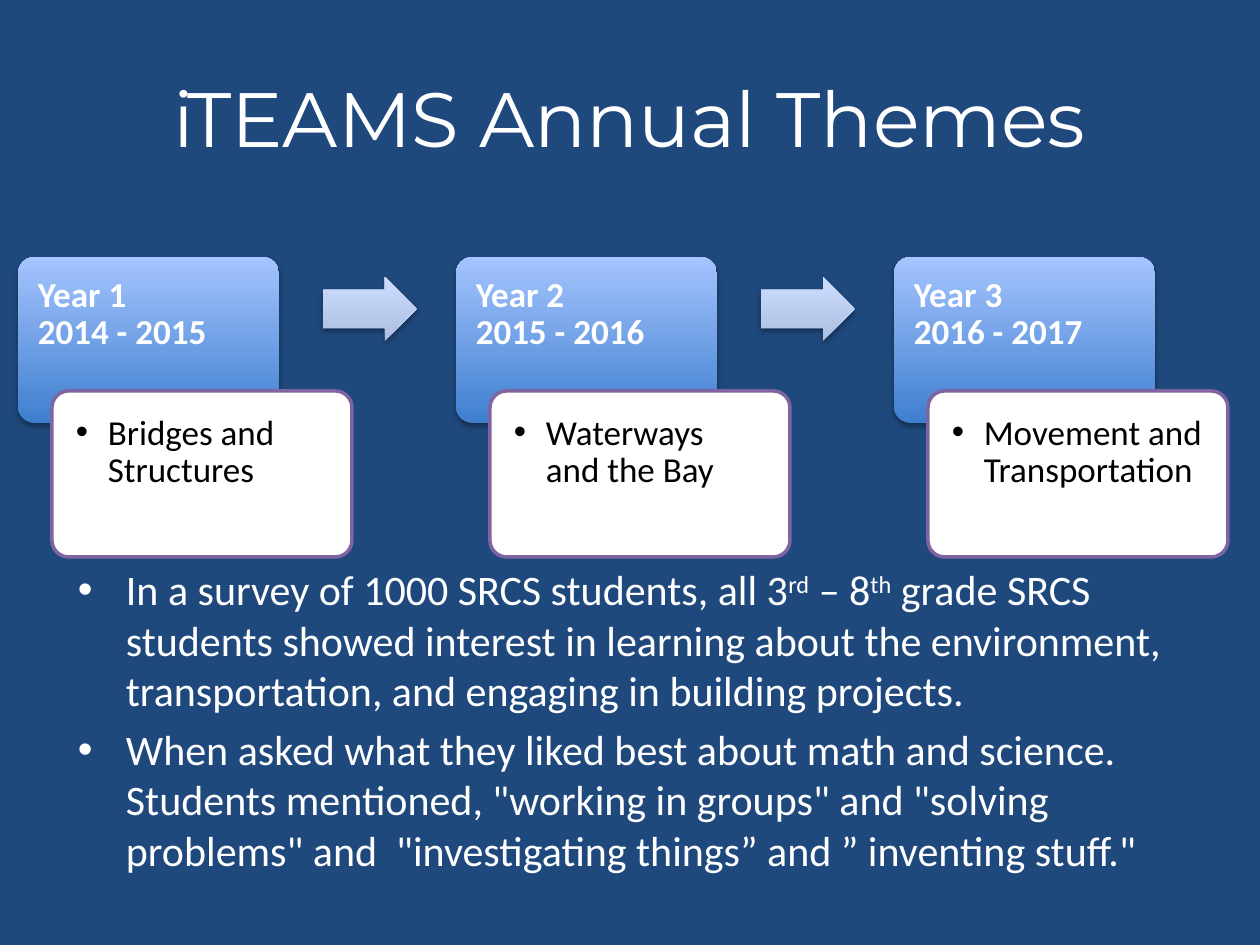
"""Build the iTEAMS annual themes slide."""
from dataclasses import dataclass
from typing import NamedTuple

from lxml.etree import SubElement
from pptx import Presentation
from pptx.dml.color import RGBColor as Rgb
from pptx.enum.shapes import MSO_SHAPE as Shape
from pptx.enum.text import MSO_ANCHOR as Anchor, PP_ALIGN as Align
from pptx.oxml.ns import qn
from pptx.util import Emu, Pt


@dataclass(frozen=True)
class Theme:
    background: str = "1F497D"
    light: str = "FFFFFF"
    dark: str = "000000"
    card_line: str = "8064A2"
    year_gradient: tuple = ("3F7FCE", "A4C4FF")
    arrow_gradient: tuple = ("ADBFE1", "CCDDFF")
    heading_font: str = "Montserrat"
    body_font: str = "Calibri"
    heading_size: int = 44
    body_size: int = 24
    step_size: int = 20


class Box(NamedTuple):
    left: int
    top: int
    width: int
    height: int

    def shifted(self, distance: int) -> "Box":
        return self._replace(left=self.left + distance)


class Style(NamedTuple):
    font: str
    size: int
    color: str
    bold: bool = False


class Piece(NamedTuple):
    text: str
    raised: bool = False


class Step(NamedTuple):
    year: tuple
    topic: tuple


THEME = Theme()
PX_PER_INCH = 126
PITCH = 438
YEAR_INSET = 15
TOPIC_INSET = 19
YEAR_BOX = Box(18, 257, 261, 166)
TOPIC_BOX = Box(52, 391, 300, 166)
ARROW_BOX = Box(323, 277, 94, 64)
HEADING_BOX = Box(63, 38, 1134, 158)
FINDINGS_BOX = Box(66, 558, 1162, 352)

STEPS = [
    Step(("Year 1", "2014 - 2015"), ("Bridges and Structures",)),
    Step(("Year 2", "2015 - 2016"), ("Waterways ", "and the Bay")),
    Step(("Year 3", "2016 - 2017"), ("Movement and Transportation",)),
]
FINDINGS = [
    [
        Piece("In a survey of 1000 SRCS students, all 3"),
        Piece("rd", True),
        Piece(" – 8"),
        Piece("th", True),
        Piece(" grade SRCS students showed interest in learning about the "
              "environment, transportation, and engaging in building projects."),
    ],
    [
        Piece("When asked what they liked best about math and science. Students "
              'mentioned, "working in groups" and "solving problems" and  '
              '"investigating things” and ” inventing stuff."'),
    ],
]


def px(count: int) -> Emu:
    return Emu(round(count * 914400 / PX_PER_INCH))


def place(box: Box) -> list:
    return [px(length) for length in box]


def add_run(paragraph, piece: Piece, style: Style) -> None:
    run = paragraph.add_run()
    run.text = piece.text
    run.font.name = style.font
    run.font.size = Pt(style.size)
    run.font.bold = style.bold
    run.font.color.rgb = Rgb.from_string(style.color)
    if piece.raised:
        run._r.get_or_add_rPr().set("baseline", "30000")


def add_lines(paragraph, lines: tuple, style: Style) -> None:
    paragraph.alignment = Align.LEFT
    paragraph.line_spacing = 0.9
    for index, line in enumerate(lines):
        if index:
            paragraph.add_line_break()
        add_run(paragraph, Piece(line), style)


def add_bullet(paragraph, indent: int) -> None:
    properties = paragraph._p.get_or_add_pPr()
    properties.set("marL", str(px(indent)))
    properties.set("indent", str(-px(indent)))
    SubElement(properties, qn("a:buFont"), typeface="Arial")
    SubElement(properties, qn("a:buChar"), char="•")


def prepare_frame(shape, inset: int):
    frame = shape.text_frame
    frame.word_wrap = True
    frame.vertical_anchor = Anchor.TOP
    frame.margin_left = frame.margin_top = px(inset)
    frame.margin_right = frame.margin_bottom = px(inset)
    return frame


def add_block(slide, kind, box: Box, *adjustments: float):
    block = slide.shapes.add_shape(kind, *place(box))
    for index, value in enumerate(adjustments):
        block.adjustments[index] = value
    block.shadow.inherit = False
    return block


def add_raised_block(slide, kind, box: Box, colors: tuple, *adjustments: float):
    block = add_block(slide, kind, box, *adjustments)
    block.fill.gradient()
    block.fill.gradient_angle = 90
    for stop, color in zip(block.fill.gradient_stops, colors):
        stop.color.rgb = Rgb.from_string(color)
    block.line.fill.background()
    effects = block._element.spPr.find(qn("a:effectLst"))
    shadow = SubElement(effects, qn("a:outerShdw"), blurRad="40000", dist="23000",
                        dir="5400000", rotWithShape="0")
    shade = SubElement(shadow, qn("a:srgbClr"), val=THEME.dark)
    SubElement(shade, qn("a:alpha"), val="35000")
    return block


def draw_step(slide, step: Step, shift: int) -> None:
    year = add_raised_block(slide, Shape.ROUNDED_RECTANGLE, YEAR_BOX.shifted(shift),
                            THEME.year_gradient, 0.1)
    year_style = Style(THEME.body_font, THEME.step_size, THEME.light, True)
    add_lines(prepare_frame(year, YEAR_INSET).paragraphs[0], step.year, year_style)

    topic = add_block(slide, Shape.ROUNDED_RECTANGLE, TOPIC_BOX.shifted(shift), 0.1)
    topic.fill.solid()
    topic.fill.fore_color.rgb = Rgb.from_string(THEME.light)
    topic.line.color.rgb = Rgb.from_string(THEME.card_line)
    topic.line.width = Pt(2)
    label = prepare_frame(topic, TOPIC_INSET).paragraphs[0]
    add_lines(label, step.topic, Style(THEME.body_font, THEME.step_size, THEME.dark))
    add_bullet(label, 32)


def draw_heading(slide) -> None:
    heading = slide.shapes.add_textbox(*place(HEADING_BOX))
    frame = prepare_frame(heading, 6)
    frame.vertical_anchor = Anchor.MIDDLE
    frame.paragraphs[0].alignment = Align.CENTER
    add_run(frame.paragraphs[0], Piece("iTEAMS Annual Themes"),
            Style(THEME.heading_font, THEME.heading_size, THEME.light))


def draw_findings(slide) -> None:
    frame = prepare_frame(slide.shapes.add_textbox(*place(FINDINGS_BOX)), 12)
    frame.margin_top = frame.margin_bottom = px(6)
    style = Style(THEME.body_font, THEME.body_size, THEME.light)
    for index, finding in enumerate(FINDINGS):
        paragraph = frame.add_paragraph() if index else frame.paragraphs[0]
        paragraph.space_before = Pt(4.8)
        add_bullet(paragraph, 48)
        for piece in finding:
            add_run(paragraph, piece, style)


def main() -> None:
    deck = Presentation()
    deck.slide_width, deck.slide_height = px(1260), px(945)
    slide = deck.slides.add_slide(deck.slide_layouts[6])
    slide.background.fill.solid()
    slide.background.fill.fore_color.rgb = Rgb.from_string(THEME.background)
    draw_heading(slide)
    draw_findings(slide)
    for index, step in enumerate(STEPS):
        draw_step(slide, step, index * PITCH)
        if index < len(STEPS) - 1:
            add_raised_block(slide, Shape.RIGHT_ARROW, ARROW_BOX.shifted(index * PITCH),
                             THEME.arrow_gradient, 0.6, 0.5)
    deck.save("out.pptx")


if __name__ == "__main__":
    main()
